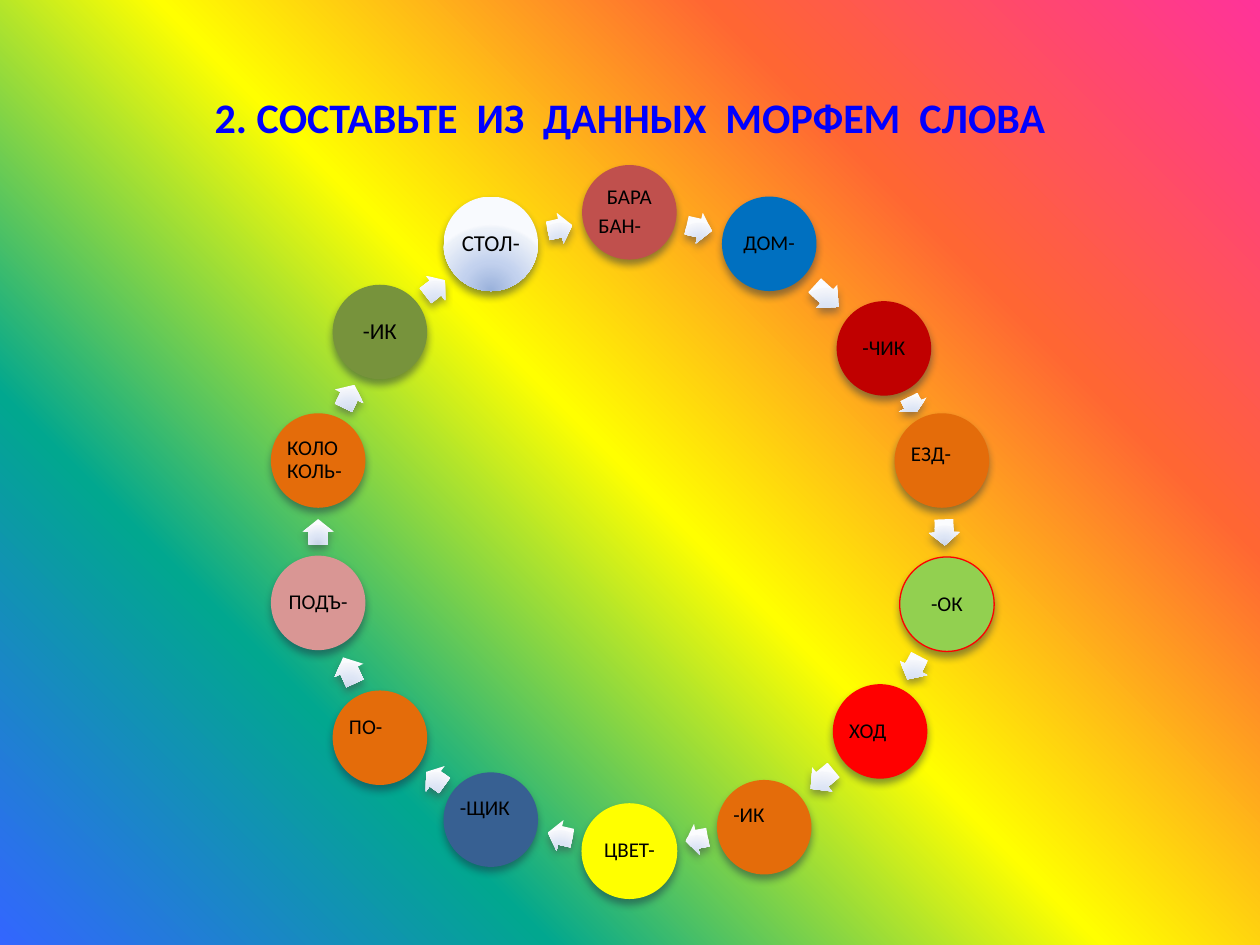
import math
from itertools import pairwise

from pptx import Presentation
from pptx.dml.color import RGBColor
from pptx.enum.shapes import MSO_SHAPE
from pptx.enum.text import MSO_ANCHOR, PP_ALIGN
from pptx.oxml import parse_xml
from pptx.oxml.ns import nsdecls, qn
from pptx.util import Inches, Pt

OVAL, ARROW = MSO_SHAPE.OVAL, MSO_SHAPE.RIGHT_ARROW
MIDDLE = MSO_ANCHOR.MIDDLE
LEFT, CENTER = PP_ALIGN.LEFT, PP_ALIGN.CENTER

# Content
FONT = "Calibri"
TITLE = "2. СОСТАВЬТЕ  ИЗ  ДАННЫХ  МОРФЕМ  СЛОВА"
RAINBOW = [(0, "FF3399"), (25, "FF6633"), (50, "FFFF00"), (75, "01A78F"), (100, "3366FF")]
PALE = [(0, "CAD5EA"), (43, "DDE5F5"), (93, "F4F6FB"), (100, "FBFCFE")]
SKY = [(0, "99B1DB"), (43, "C2D1EE"), (93, "ECF1F9"), (100, "F8FAFE")]
DIAGONAL = '<a:lin ang="8100000" scaled="0"/>'
GLOW = '<a:path path="circle"><a:fillToRect l="50000" t="130000" r="50000" b="-30000"/></a:path>'

# Clockwise from the top: left, top, fill, outline, size, raise of text, lines with alignment
MORPHEMES = [
    (4.62, 1.31, "C0504D", None, 12, 0, [("БАРА", CENTER), ("БАН-", LEFT)]),
    (5.73, 1.56, "0070C0", None, 12, 0, [("ДОМ-", CENTER)]),
    (6.64, 2.39, "C00000", None, 12, 0, [("-ЧИК", CENTER)]),
    (7.10, 3.28, "E46C0A", None, 12, 0.05, [("ЕЗД-", LEFT)]),
    (7.14, 4.42, "92D050", "FF0000", 12, 0, [("-ОК", CENTER)]),
    (6.61, 5.43, "FF0000", None, 12, 0, [("ХОД", LEFT)]),
    (5.69, 6.19, "E46C0A", None, 12, 0.09, [("-ИК", LEFT)]),
    (4.62, 6.38, "FFFF00", "FFFF00", 12, 0, [("ЦВЕТ-", CENTER)]),
    (3.52, 6.13, "376092", None, 12, 0.09, [("-ЩИК", LEFT)]),
    (2.64, 5.48, "E46C0A", None, 12, 0.08, [("ПО-", LEFT)]),
    (2.15, 4.41, "D99694", None, 12, 0, [("ПОДЪ-", CENTER)]),
    (2.15, 3.28, "E46C0A", None, 12, 0, [("КОЛОКОЛЬ-", LEFT)]),
    (2.64, 2.26, "77933C", None, 13, 0, [("-ИК", CENTER)]),
    (3.52, 1.56, SKY, None, 13, 0, [("СТОЛ-", CENTER)]),
]
DIAMETER = 0.75
ARROW_HEIGHT = 0.25
ARROW_SHARE = 0.53  # part of the gap between circles that an arrow fills
INSET = 0.02


def color(value):
    return RGBColor.from_string(value)


def set_gradient(holder, stops, direction):
    """Replace the solid fill inside holder by a gradient."""
    marks = "".join(
        f'<a:gs pos="{pos * 1000}"><a:srgbClr val="{value}"/></a:gs>' for pos, value in stops)
    gradient = parse_xml(
        f'<a:gradFill {nsdecls("a")} rotWithShape="1"><a:gsLst>{marks}</a:gsLst>'
        f'{direction}</a:gradFill>')
    holder.replace(holder.find(qn("a:solidFill")), gradient)


def add_part(page, kind, left, top, width, height, fill, outline, shadow):
    part = page.shapes.add_shape(
        kind, Inches(left), Inches(top), Inches(width), Inches(height))
    part.fill.solid()
    if isinstance(fill, str):
        part.fill.fore_color.rgb = color(fill)
    else:
        set_gradient(part._element.spPr, fill, GLOW)
    if outline:
        part.line.color.rgb = color(outline)
        part.line.width = Pt(0.75)
    else:
        part.line.fill.background()
    part.shadow.inherit = False
    part._element.spPr.find(qn("a:effectLst")).append(parse_xml(
        f'<a:outerShdw {nsdecls("a")} blurRad="57150" dist="38100" dir="5400000" '
        f'algn="ctr" rotWithShape="0"><a:srgbClr val="{shadow}">'
        '<a:alpha val="48000"/></a:srgbClr></a:outerShdw>'))
    return part


def set_font(para, size, value, bold=False):
    para.font.name = FONT
    para.font.size = Pt(size)
    para.font.bold = bold
    para.font.color.rgb = color(value)


def add_morpheme(page, left, top, fill, outline, size, lift, lines):
    circle = add_part(page, OVAL, left, top, DIAMETER, DIAMETER, fill, outline, "1B2D43")
    frame = circle.text_frame
    frame.word_wrap = True
    frame.vertical_anchor = MIDDLE
    frame.margin_left = frame.margin_right = frame.margin_top = Inches(INSET)
    frame.margin_bottom = Inches(INSET + 2 * lift)
    for index, (text, align) in enumerate(lines):
        para = frame.add_paragraph() if index else frame.paragraphs[0]
        para.text = text
        para.alignment = align
        para.line_spacing = 0.9
        if index:
            para.space_before = Pt(4)
        set_font(para, size, "000000")


def add_arrow(page, start, end):
    """Centre an arrow between two circles and turn it to the second."""
    dx, dy = end[0] - start[0], end[1] - start[1]
    width = ARROW_SHARE * (math.hypot(dx, dy) - DIAMETER)
    middle_x = start[0] + (dx + DIAMETER) / 2
    middle_y = start[1] + (dy + DIAMETER) / 2
    arrow = add_part(page, ARROW, middle_x - width / 2, middle_y - ARROW_HEIGHT / 2,
                     width, ARROW_HEIGHT, PALE, None, "3E444D")
    arrow.adjustments[0] = 0.6
    arrow.adjustments[1] = 0.5
    arrow.rotation = math.degrees(math.atan2(dy, dx)) % 360


def main():
    deck = Presentation()
    deck.slide_width, deck.slide_height = Inches(10), Inches(7.5)
    page = deck.slides.add_slide(deck.slide_layouts[6])

    # Background
    page.background.fill.solid()
    set_gradient(page._element.find(".//" + qn("p:bgPr")), RAINBOW, DIAGONAL)

    # Title
    box = page.shapes.add_textbox(Inches(0.5), Inches(0.3), Inches(9), Inches(1.25))
    box.text_frame.word_wrap = True
    box.text_frame.vertical_anchor = MIDDLE
    para = box.text_frame.paragraphs[0]
    para.text = TITLE
    para.alignment = CENTER
    set_font(para, 24, "0000FF", bold=True)

    # Ring of morphemes, each followed by an arrow to the next
    for morpheme, following in pairwise(MORPHEMES + MORPHEMES[:1]):
        add_morpheme(page, *morpheme)
        add_arrow(page, morpheme[:2], following[:2])

    deck.save("out.pptx")


if __name__ == "__main__":
    main()
